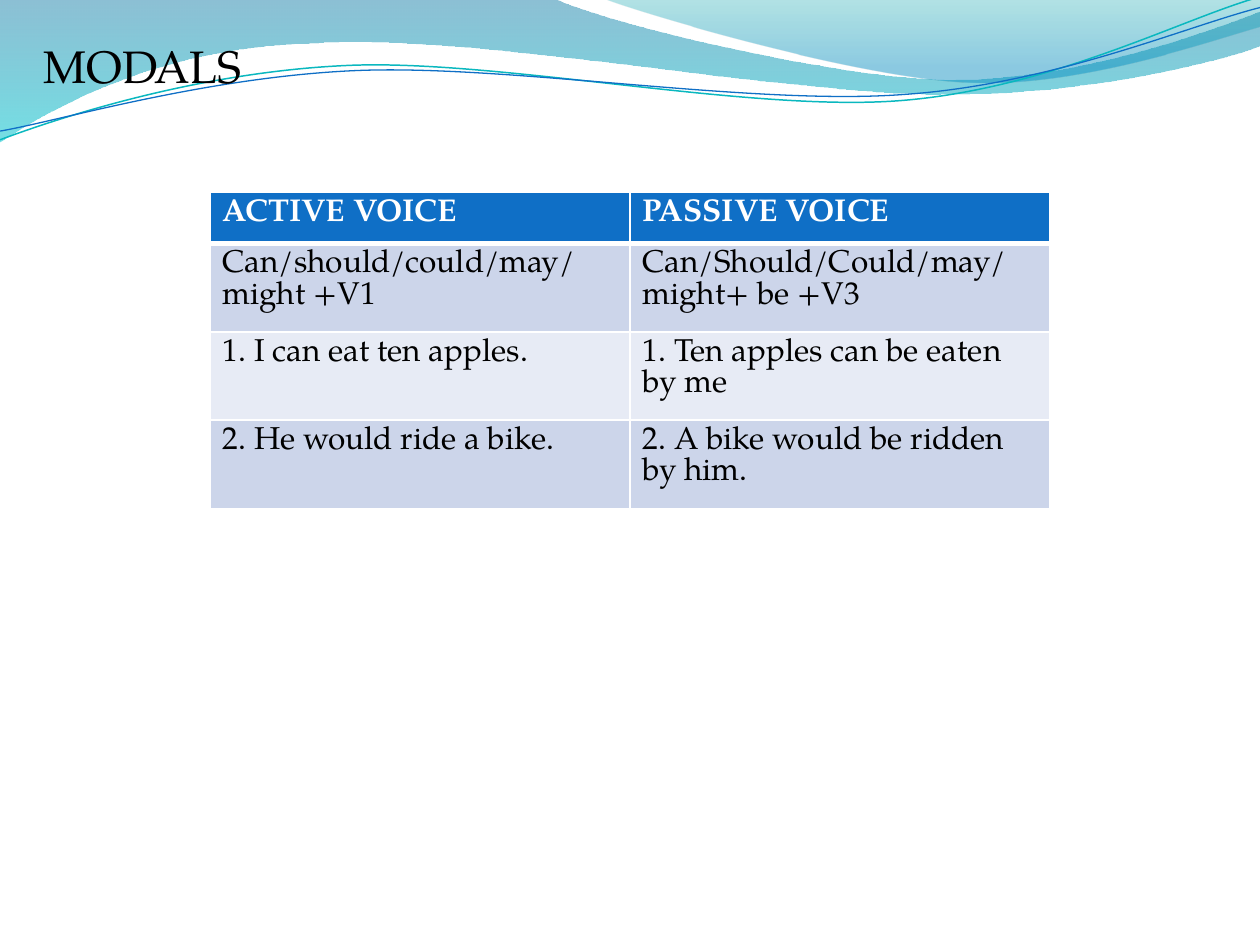
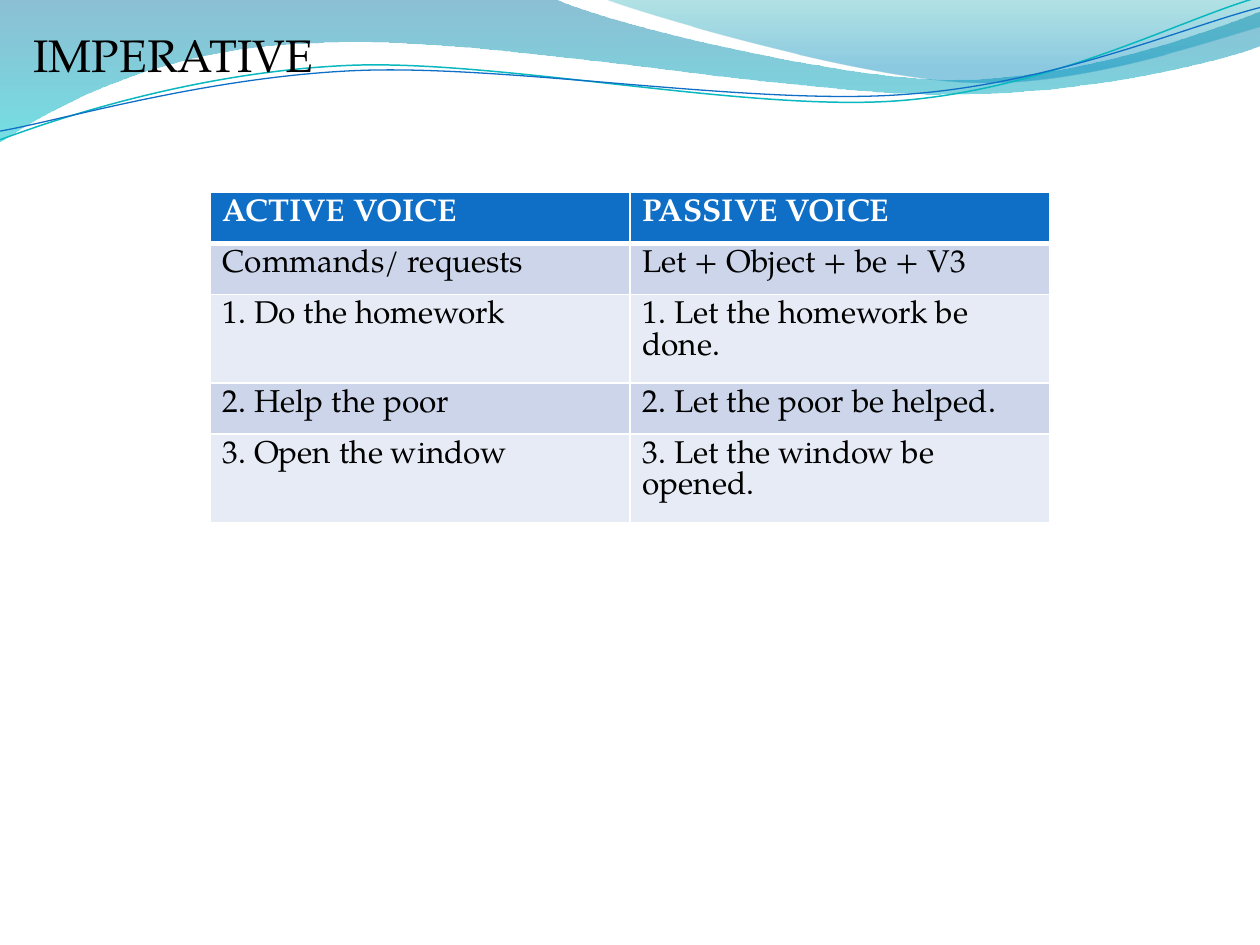
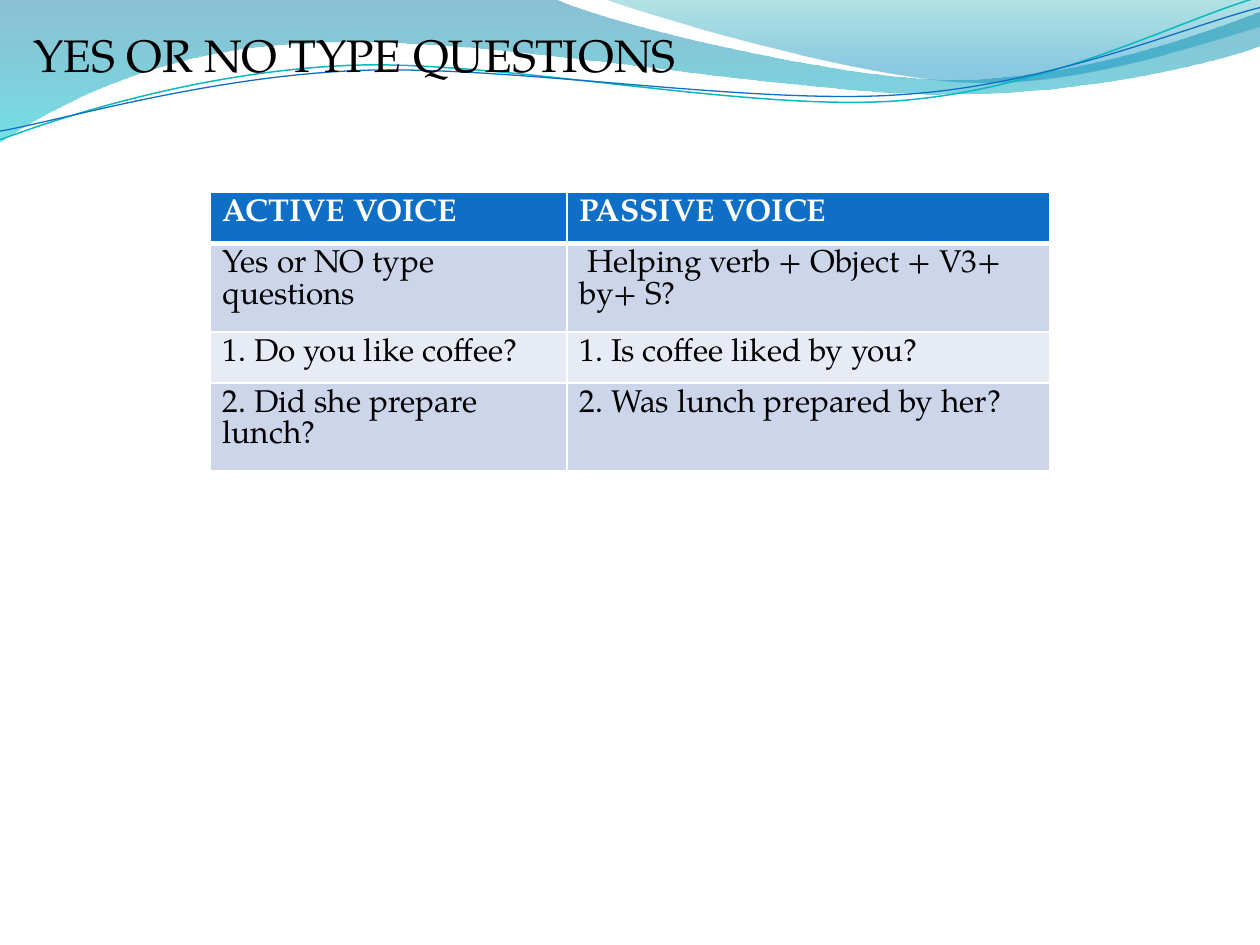
from typing import NamedTuple

import pptx
import pptx.dml.color
import pptx.oxml.ns
import pptx.util
from lxml import etree

Pt = pptx.util.Pt
qn = pptx.oxml.ns.qn

FONT = "TeX Gyre Pagella"
BLACK, WHITE = "000000", "FFFFFF"
BLUE, TEAL = "0F6FC6", "0AB8BF"
BANDS = ("CCD5EA", "E7EBF5")
HEADER = ("ACTIVE VOICE", "PASSIVE VOICE")

TABLE_LEFT, TABLE_TOP, ROW_HEIGHT = 120, 110, 29.2
PLAIN_TABLE = "{2D5ABB26-0587-4C30-8999-92F81FD0307C}"  # no style, no grid


class Stop(NamedTuple):
    position: float
    color: str
    opacity: int  # percent


class Wave(NamedTuple):
    """An outline: two numbers per segment draw a line, six a Bezier curve."""
    start: tuple[float, float]
    segments: tuple[tuple[float, ...], ...]
    stops: tuple[Stop, ...] = ()  # a filled band
    line: str = ""                # or a thin line
    width: float = 0


class VoiceSlide(NamedTuple):
    title: str
    title_box: tuple[float, float, float, float]
    columns: tuple[float, float]
    rows: tuple[tuple[str, str], ...]


WAVES = (
    Wave((0, 0), (
        (316.8, -0.7),
        (342.7, 12.2, 478.1, 45.4, 545.8, 45.4),
        (614.2, 45.4, 689.8, 18.7, 720, 6.5),
        (720.7, 25.9),
        (707.8, 31.7, 626.4, 54.7, 537.1, 54),
        (447.8, 54, 275, 20.2, 185, 24.5),
        (92.9, 25.9, 33.1, 59.8, -0.7, 81.4),
    ), stops=(Stop(0, "0074A1", 45), Stop(1, "00C6CF", 55))),
    Wave((344.9, -0.7), (
        (366.5, 7.9, 491, 44.6, 553.7, 46.8),
        (616.3, 49.7, 691.9, 23, 720, 15.1),
        (720, 0),
    ), stops=(Stop(0, "00A1A9", 30), Stop(0.8, "008BBF", 45))),
    Wave((0, 79.9), (
        (34.6, 67, 113.8, 41, 199.4, 37.4),
        (284.4, 33.8, 427, 64.1, 513.4, 57.6),
        (599.8, 51.1, 675.4, 10.8, 718.6, -1.4),
    ), line=TEAL, width=0.85),
    Wave((0, 74.9), (
        (33.8, 69.1, 118.1, 43.9, 203.8, 40.3),
        (290.2, 36.7, 429.8, 60.5, 516.2, 54),
        (601.9, 48.2, 677.5, 15.1, 720, 4.3),
    ), line=BLUE, width=0.75),
)

SLIDES = (
    VoiceSlide("MODALS", (18, 18, 684, 504), (240, 240), (
        ("Can/should/could/may/might +V1", "Can/Should/Could/may/might+ be +V3"),
        ("1. I can eat ten apples.", "1. Ten apples can be eaten by me"),
        ("2. He would ride a bike.", "2. A bike would be ridden by him."),
    )),
    VoiceSlide("IMPERATIVE", (12, 12, 696, 510), (240, 240), (
        ("Commands/ requests", "Let + Object + be + V3"),
        ("1. Do the homework", "1. Let the homework be done."),
        ("2. Help the poor", "2. Let the poor be helped."),
        ("3. Open the window", "3. Let the window be opened."),
    )),
    VoiceSlide("YES OR NO TYPE QUESTIONS", (12, 12, 690, 516), (204, 276), (
        ("Yes or NO type questions", " Helping verb + Object + V3+ by+ S?"),
        ("1. Do you like coffee?", "1. Is coffee liked by you?"),
        ("2. Did she prepare lunch?", "2. Was lunch prepared by her?"),
    )),
)


def rgb(color: str) -> pptx.dml.color.RGBColor:
    return pptx.dml.color.RGBColor.from_string(color)


def set_font(font, size: float, color: str, bold: bool = False) -> None:
    font.name = FONT
    font.size = Pt(size)
    font.bold = bold
    font.color.rgb = rgb(color)


def set_default_face(prs) -> None:
    for root in (prs.element, prs.slide_master.element):
        for latin in root.iter(qn("a:latin")):
            latin.set("typeface", FONT)


def fill_gradient(sp, stops: tuple[Stop, ...]) -> None:
    sp.fill.gradient()
    sp.fill.gradient_angle = 270
    for gradient_stop, stop in zip(sp.fill.gradient_stops, stops):
        gradient_stop.position = stop.position
        gradient_stop.color.rgb = rgb(stop.color)
    for clr, stop in zip(sp.element.spPr.iter(qn("a:srgbClr")), stops):
        etree.SubElement(clr, qn("a:alpha"), val=str(stop.opacity * 1000))


def bend_segments(sp, segments: tuple[tuple[float, ...], ...]) -> None:
    """Turn the straight segments that have control points into curves."""
    lines = list(sp.element.spPr.iter(qn("a:lnTo")))
    for line, segment in zip(lines, segments):
        if len(segment) == 2:
            continue
        curve = etree.Element(qn("a:cubicBezTo"))
        for x, y in zip(segment[::2], segment[1::2]):
            etree.SubElement(curve, qn("a:pt"),
                             x=str(Pt(x) - sp.left), y=str(Pt(y) - sp.top))
        line.getparent().replace(line, curve)


def draw_wave(s, wave: Wave) -> None:
    x, y = wave.start
    builder = s.shapes.build_freeform(Pt(x), Pt(y))
    builder.add_line_segments([(Pt(seg[-2]), Pt(seg[-1])) for seg in wave.segments],
                              close=bool(wave.stops))
    sp = builder.convert_to_shape()
    bend_segments(sp, wave.segments)
    sp.shadow.inherit = False
    if wave.stops:
        fill_gradient(sp, wave.stops)
        sp.line.fill.background()
    else:
        sp.fill.background()
        sp.line.color.rgb = rgb(wave.line)
        sp.line.width = Pt(wave.width)


def draw_title(s, slide: VoiceSlide) -> None:
    tf = s.shapes.add_textbox(*map(Pt, slide.title_box)).text_frame
    tf.word_wrap = True
    p = tf.paragraphs[0]
    p.text = slide.title
    p.space_before = Pt(7.5)
    set_font(p.font, 26, BLACK)


def set_borders(cell, top: float, bottom: float) -> None:
    tc_pr = cell._tc.get_or_add_tcPr()
    for side, width in (("L", 1), ("R", 1), ("T", top), ("B", bottom)):
        ln = etree.SubElement(tc_pr, qn(f"a:ln{side}"), w=str(Pt(width)))
        fill = etree.SubElement(ln, qn("a:solidFill"))
        etree.SubElement(fill, qn("a:srgbClr"), val=WHITE)


def draw_table(s, slide: VoiceSlide) -> None:
    rows = (HEADER, *slide.rows)
    frame = s.shapes.add_table(
        len(rows), len(HEADER), Pt(TABLE_LEFT), Pt(TABLE_TOP),
        Pt(sum(slide.columns)), Pt(ROW_HEIGHT * len(rows)))
    for style in frame.element.iter(qn("a:tableStyleId")):
        style.text = PLAIN_TABLE
    table = frame.table
    for column, width in zip(table.columns, slide.columns):
        column.width = Pt(width)
    for i, texts in enumerate(rows):
        is_header = i == 0
        for j, text in enumerate(texts):
            cell = table.cell(i, j)
            # The rule under the header is heavier than the others
            set_borders(cell, top=3 if i == 1 else 1, bottom=3 if is_header else 1)
            cell.fill.solid()
            cell.fill.fore_color.rgb = rgb(BLUE if is_header else BANDS[(i - 1) % 2])
            # Row heights follow the fonts of the runs
            r = cell.text_frame.paragraphs[0].add_run()
            r.text = text
            set_font(r.font, 18, WHITE if is_header else BLACK, bold=is_header)


def main() -> None:
    prs = pptx.Presentation()
    prs.slide_width, prs.slide_height = Pt(720), Pt(540)
    set_default_face(prs)
    for slide in SLIDES:
        s = prs.slides.add_slide(prs.slide_layouts[6])
        for wave in WAVES:
            draw_wave(s, wave)
        draw_title(s, slide)
        draw_table(s, slide)
    prs.save("out.pptx")


if __name__ == "__main__":
    main()
